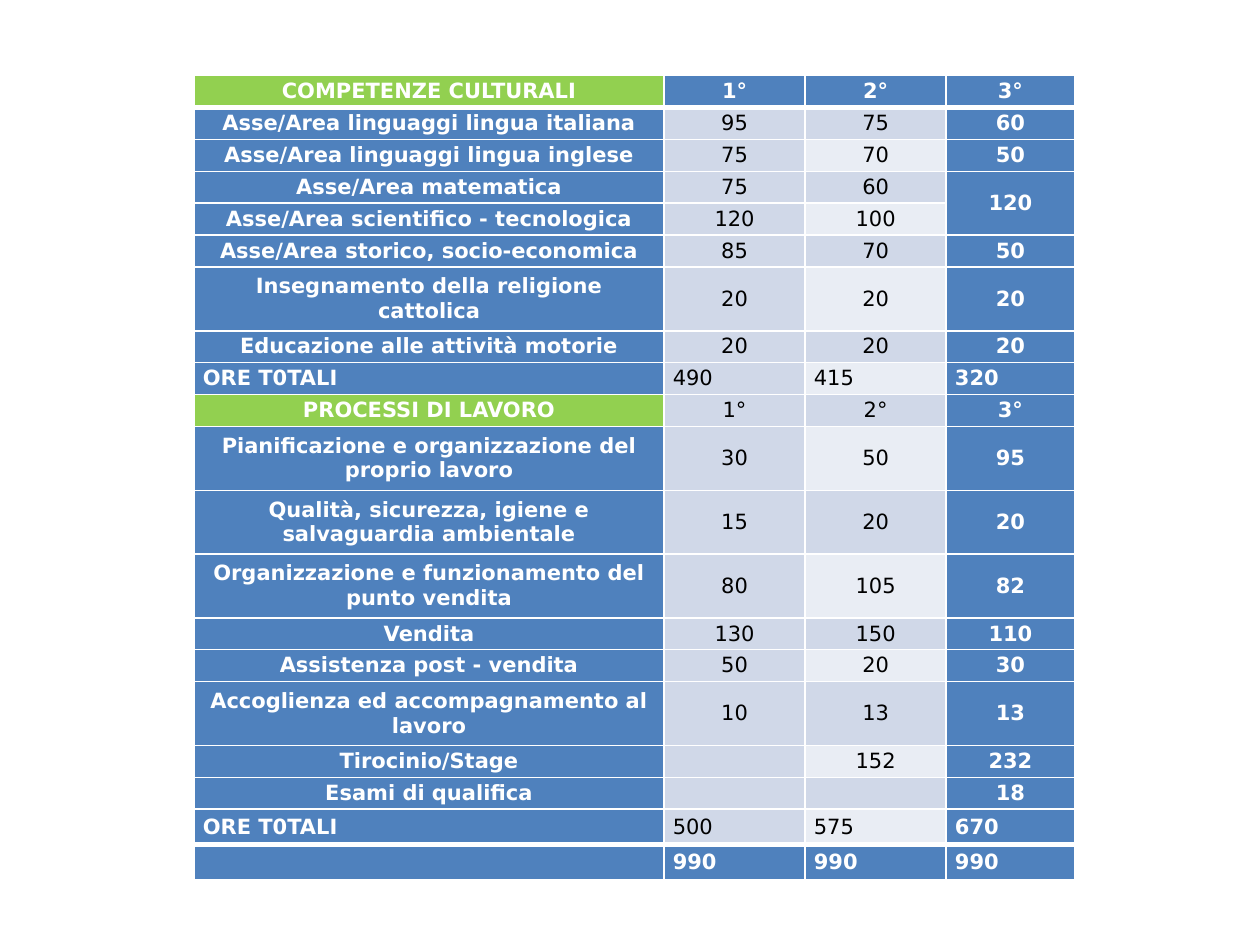
from dataclasses import dataclass

from lxml.etree import SubElement
from pptx import Presentation
from pptx.dml.color import RGBColor
from pptx.enum.text import MSO_ANCHOR, PP_ALIGN
from pptx.oxml.ns import qn
from pptx.table import Table, _Cell
from pptx.util import Inches, Pt


@dataclass(frozen=True)
class Theme:
    font: str = "DejaVu Sans"
    size: int = 12
    white: str = "FFFFFF"
    black: str = "000000"
    blue: str = "4F81BD"
    green: str = "92D050"
    band: str = "D0D8E8"
    light_band: str = "E9EDF4"
    thin: int = 1
    thick: int = 3


@dataclass(frozen=True)
class HoursRow:
    label: str
    hours: tuple[str, str, str]
    lines: float = 1
    kind: str = "subject"


@dataclass(frozen=True)
class CellStyle:
    fill: str
    color: str
    bold: bool
    align: PP_ALIGN
    top: int
    bottom: int


THEME = Theme()
YEARS = ("1°", "2°", "3°")
ROWS = [
    HoursRow("COMPETENZE CULTURALI", YEARS, kind="header"),
    HoursRow("Asse/Area linguaggi lingua italiana", ("95", "75", "60")),
    HoursRow("Asse/Area linguaggi lingua inglese", ("75", "70", "50")),
    HoursRow("Asse/Area matematica", ("75", "60", "120")),
    HoursRow("Asse/Area scientifico - tecnologica", ("120", "100", "")),
    HoursRow("Asse/Area storico, socio-economica", ("85", "70", "50")),
    HoursRow("Insegnamento della religione cattolica", ("20", "20", "20"), 2),
    HoursRow("Educazione alle attività motorie", ("20", "20", "20")),
    HoursRow("ORE T0TALI", ("490", "415", "320"), kind="total"),
    HoursRow("PROCESSI DI LAVORO", YEARS, kind="section"),
    HoursRow("Pianificazione e organizzazione del proprio lavoro", ("30", "50", "95"), 2),
    HoursRow("Qualità, sicurezza, igiene e salvaguardia ambientale", ("15", "20", "20"), 2),
    HoursRow("Organizzazione e funzionamento del punto vendita", ("80", "105", "82"), 2),
    HoursRow("Vendita", ("130", "150", "110")),
    HoursRow("Assistenza post - vendita", ("50", "20", "30")),
    HoursRow("Accoglienza ed accompagnamento al lavoro", ("10", "13", "13"), 2),
    HoursRow("Tirocinio/Stage", ("", "152", "232")),
    HoursRow("Esami di qualifica", ("", "", "18")),
    HoursRow("ORE T0TALI", ("500", "575", "670"), 1.1, "total"),
    HoursRow("", ("990", "990", "990"), 1.1, "grand total"),
]
MATHS_ROW = 3
LEFT, TOP, HEIGHT = 1.54, 0.6, 6.38
COLUMN_WIDTHS = (3.73, 1.12, 1.12, 1.02)
LINE_HEIGHT = HEIGHT / sum(row.lines for row in ROWS)


def choose_style(row: HoursRow, row_index: int, column: int) -> CellStyle:
    """Outer rows and outer columns are bold on blue; the middle is banded."""
    emphasised = row.kind in ("header", "grand total") or column in (0, 3)
    if column == 0 and row.kind in ("header", "section"):
        fill = THEME.green
    elif emphasised:
        fill = THEME.blue
    else:
        striped = column == 2 and row_index % 2 == 0
        fill = THEME.light_band if striped else THEME.band
    return CellStyle(
        fill=fill,
        color=THEME.white if emphasised else THEME.black,
        bold=emphasised,
        align=PP_ALIGN.LEFT if "total" in row.kind else PP_ALIGN.CENTER,
        top=THEME.thick if row.kind == "grand total" or row_index == 1 else THEME.thin,
        bottom=THEME.thick if row.kind == "header" or row_index == len(ROWS) - 2 else THEME.thin,
    )


def draw_borders(cell: _Cell, style: CellStyle) -> None:
    properties = cell._tc.get_or_add_tcPr()
    widths = {"lnL": THEME.thin, "lnR": THEME.thin, "lnT": style.top, "lnB": style.bottom}
    for side, width in widths.items():
        line = SubElement(properties, qn(f"a:{side}"), w=str(Pt(width)))
        fill = SubElement(line, qn("a:solidFill"))
        SubElement(fill, qn("a:srgbClr"), val=THEME.white)


def fill_cell(cell: _Cell, text: str, style: CellStyle) -> None:
    layout = {
        "vertical_anchor": MSO_ANCHOR.MIDDLE,
        "margin_left": Inches(0.07),
        "margin_right": Inches(0.07),
        "margin_top": 0,
        "margin_bottom": 0,
    }
    for name, value in layout.items():
        setattr(cell, name, value)
    draw_borders(cell, style)
    cell.fill.solid()
    cell.fill.fore_color.rgb = RGBColor.from_string(style.fill)

    para = cell.text_frame.paragraphs[0]
    para.alignment = style.align
    if not text:
        # The end mark keeps an empty cell from stretching its row.
        SubElement(para._p, qn("a:endParaRPr"), sz=str(THEME.size * 100))
        return
    span = para.add_run()
    span.text = text
    for name, value in {"name": THEME.font, "size": Pt(THEME.size), "bold": style.bold}.items():
        setattr(span.font, name, value)
    span.font.color.rgb = RGBColor.from_string(style.color)


def fill_table(table: Table) -> None:
    for column, width in zip(table.columns, COLUMN_WIDTHS):
        column.width = Inches(width)
    for row_index, row in enumerate(ROWS):
        table.rows[row_index].height = Inches(row.lines * LINE_HEIGHT)
        for column, text in enumerate((row.label, *row.hours)):
            fill_cell(table.cell(row_index, column), text, choose_style(row, row_index, column))
    table.cell(MATHS_ROW, 3).merge(table.cell(MATHS_ROW + 1, 3))


def main() -> None:
    deck = Presentation()
    deck.slide_width, deck.slide_height = Inches(10), Inches(7.5)
    page = deck.slides.add_slide(deck.slide_layouts[6])
    frame = page.shapes.add_table(
        len(ROWS), len(COLUMN_WIDTHS),
        Inches(LEFT), Inches(TOP), Inches(sum(COLUMN_WIDTHS)), Inches(HEIGHT),
    )
    fill_table(frame.table)
    deck.save("out.pptx")


if __name__ == "__main__":
    main()
